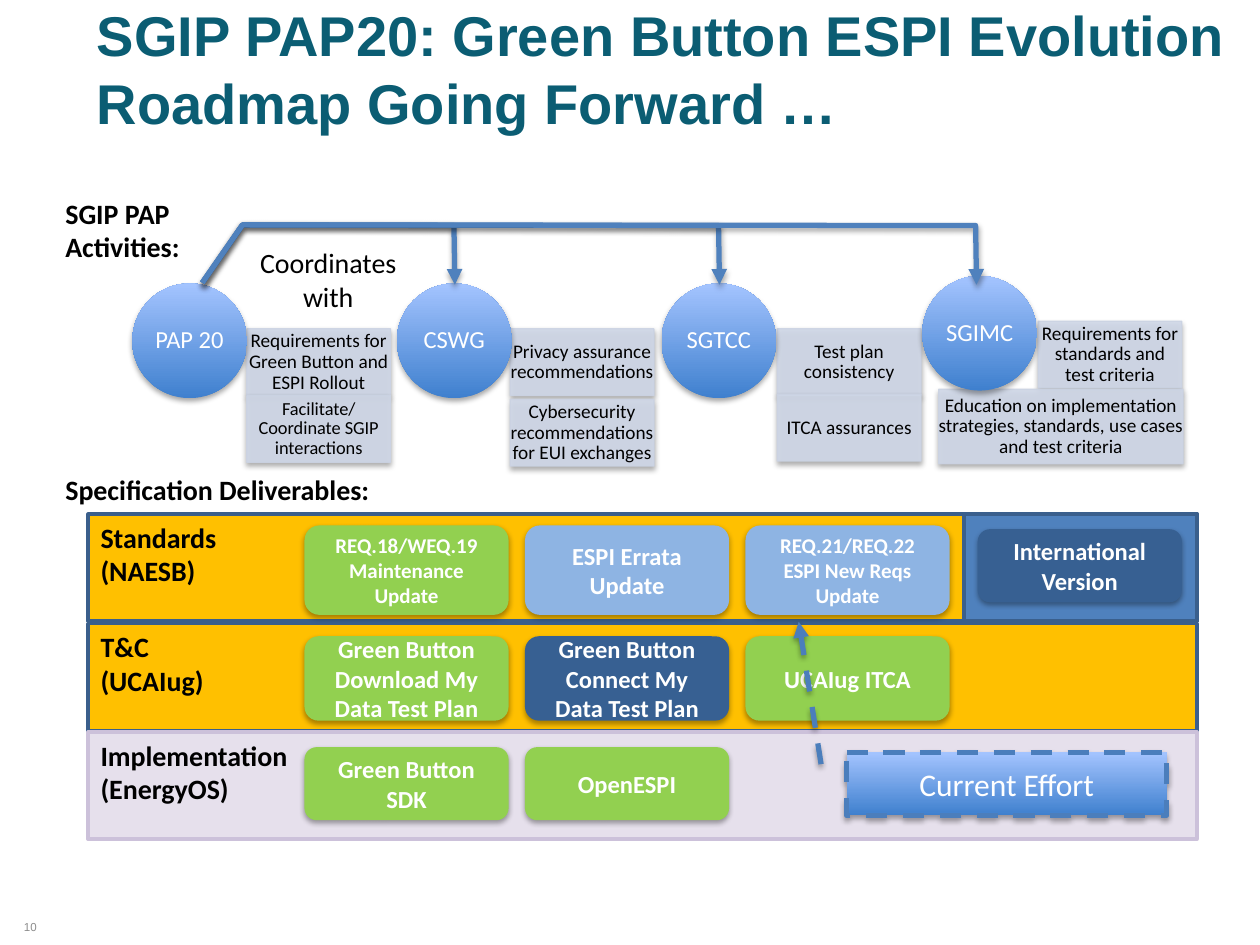
from lxml import etree
from pptx import Presentation
from pptx.dml.color import RGBColor
from pptx.enum.dml import MSO_LINE
from pptx.enum.shapes import MSO_SHAPE
from pptx.enum.text import MSO_ANCHOR, PP_ALIGN
from pptx.oxml.ns import qn
from pptx.util import Pt

RECT, ROUND = MSO_SHAPE.RECTANGLE, MSO_SHAPE.ROUNDED_RECTANGLE
OVAL, CALLOUT = MSO_SHAPE.OVAL, MSO_SHAPE.LINE_CALLOUT_1
LEFT, CENTER, RIGHT = PP_ALIGN.LEFT, PP_ALIGN.CENTER, PP_ALIGN.RIGHT
TOP, MIDDLE = MSO_ANCHOR.TOP, MSO_ANCHOR.MIDDLE
DASH = MSO_LINE.DASH

COLORS = {
    "title": "0B5D73", "number": "8C8C8C", "black": "000000", "white": "FFFFFF",
    "amber": "FFC000", "navy": "376092", "navy_line": "3A5F8C", "blue": "4F81BD",
    "sky": "8EB4E3", "green": "92D050", "lilac": "E6E0EC", "lilac_line": "CCC1DA",
    "task": "D0D8E8", "task_line": "CBD3E3", "callout_line": "4B7EBC",
    "grad_dark": "3F80CE", "grad_light": "A4C4FF",
}
RGB = {name: RGBColor.from_string(value) for name, value in COLORS.items()}

prs = Presentation()
prs.slide_width, prs.slide_height = Pt(720), Pt(540)
s = prs.slides.add_slide(prs.slide_layouts[6])


def add_shadow(sp):
    sp.shadow.inherit = False
    effects = sp._element.spPr.find(qn("a:effectLst"))
    outer = etree.SubElement(effects, qn("a:outerShdw"), blurRad="40000",
                             dist="23000", dir="5400000", rotWithShape="0")
    color = etree.SubElement(outer, qn("a:srgbClr"), val=COLORS["black"])
    etree.SubElement(color, qn("a:alpha"), val="35000")


def add_box(text, x, y, w, h, kind=None, fill=None, line=None, width=2, shadow=False,
            size=16, color="black", bold=False, font="Calibri", align=CENTER,
            anchor=MIDDLE, inset=None, spacing=None, wrap=True):
    place = Pt(x), Pt(y), Pt(w), Pt(h)
    if kind is None:
        sp = s.shapes.add_textbox(*place)
    else:
        sp = s.shapes.add_shape(kind, *place)
        sp.shadow.inherit = False
        if fill == "gradient":
            sp.fill.gradient()
            sp.fill.gradient_angle = 90
            for stop, shade in zip(sp.fill.gradient_stops, ("grad_dark", "grad_light")):
                stop.color.rgb = RGB[shade]
                stop.position = 0 if shade == "grad_dark" else 1
        else:
            sp.fill.solid()
            sp.fill.fore_color.rgb = RGB[fill]
        if line:
            sp.line.color.rgb = RGB[line]
            sp.line.width = Pt(width)
        else:
            sp.line.fill.background()
        if shadow:
            add_shadow(sp)
    tf = sp.text_frame
    tf.word_wrap = wrap
    tf.vertical_anchor = anchor
    if inset is not None:
        tf.margin_left = tf.margin_right = tf.margin_top = tf.margin_bottom = Pt(inset)
    tf.text = text
    for p in tf.paragraphs:
        p.alignment = align
        if spacing:
            p.line_spacing = spacing
        for r in p.runs:
            r.font.name, r.font.size, r.font.bold = font, Pt(size), bold
            r.font.color.rgb = RGB[color]
    return sp


add_box("SGIP PAP20: Green Button ESPI Evolution Roadmap Going Forward …",
        48.24, 5.76, 661.68, 66.24, size=32, font="Arial", color="title", bold=True,
        align=LEFT)
add_box("10", 2.88, 522.72, 25.2, 14.4, size=6.6, font="Arial", color="number",
        align=RIGHT)

lanes = [
    ("Standards\v(NAESB)", 293.76, "amber", "navy_line"),
    ("T&C\v(UCAIug)", 356.4, "amber", "navy_line"),
    ("Implementation\v(EnergyOS)", 418.32, "lilac", "lilac_line"),
]
for text, y, fill, line in lanes:
    add_box(text, 50.4, y, 633.6, 61.2, RECT, fill, line, bold=True, align=LEFT,
            anchor=TOP)
add_box("", 550.8, 293.76, 133.2, 61.2, RECT, "blue", "navy_line")
add_box("International Version", 558.72, 302.4, 116.64, 41.76, ROUND, "navy",
        shadow=True, size=14, color="white", bold=True)

deliverables = [
    (300.24, 51.12, [("REQ.18/WEQ.19 Maintenance Update", "green", 12),
                     ("ESPI Errata Update", "sky", 14),
                     ("REQ.21/REQ.22\nESPI New Reqs Update", "sky", 12)]),
    (363.6, 48.24, [("Green Button Download My Data Test Plan", "green", 14),
                    ("Green Button Connect My Data Test Plan", "navy", 14),
                    ("UCAIug ITCA", "green", 14)]),
    (426.96, 41.76, [("Green Button SDK", "green", 14), ("OpenESPI", "green", 14)]),
]
for y, h, items in deliverables:
    for col, (text, fill, size) in enumerate(items):
        add_box(text, 174 + 126 * col, y, 116.64, h, ROUND, fill, shadow=True,
                size=size, color="white", bold=True)

add_box("Specification Deliverables:", 30.24, 266.4, 195.12, 27.36, bold=True,
        align=LEFT, anchor=TOP, wrap=False)
add_box("SGIP PAP Activities:", 30.24, 108.72, 104.4, 47.52, bold=True, align=LEFT,
        anchor=TOP)
add_box("Coordinates with", 136.8, 136.8, 101.52, 46.08, anchor=TOP)

groups = [
    ("PAP 20", 75.6, 162, [
        ("Requirements for Green Button and ESPI Rollout", 141.12, 187.92, 82.08, 38.16, 11),
        ("Facilitate/Coordinate SGIP interactions", 141.12, 226.08, 82.08, 38.16, 10.5)]),
    ("CSWG", 226.8, 162, [
        ("Privacy assurance recommendations", 291.6, 187.92, 82.08, 38.16, 11),
        ("Cybersecurity recommendations for EUI exchanges", 291.6, 228.24, 82.08, 38.16, 11)]),
    ("SGTCC", 378, 162, [
        ("Test plan consistency", 444.24, 187.92, 82.08, 38.16, 11),
        ("ITCA assurances", 444.24, 225.36, 82.08, 38.16, 11)]),
    ("SGIMC", 527.04, 157.68, [
        ("Requirements for standards and test criteria", 593.28, 183.6, 82.08, 38.16, 11),
        ("Education on implementation strategies, standards, use cases and test criteria",
         536.4, 222.48, 139.68, 42.48, 11)]),
]
for name, x, y, tasks in groups:
    for text, *place, size in tasks:
        sp = add_box(text, *place, RECT, "task", "task_line", 0.75, True, size=size,
                     inset=0, spacing=0.9)
        for color in sp._element.spPr.xpath("./a:solidFill/a:srgbClr | ./a:ln//a:srgbClr"):
            etree.SubElement(color, qn("a:alpha"), val="90000")
    add_box(name, x, y, 65.52, 65.52, OVAL, "gradient", shadow=True, size=14,
            color="white", inset=0, spacing=0.9, wrap=False)

arrows = []
for x in (259.92, 411.12, 558):
    route = [(138.6, 128.5), (x - 0.5, 128.88), (x, 162.72)]
    builder = s.shapes.build_freeform(Pt(115.6), Pt(161.6))
    builder.add_line_segments([(Pt(a), Pt(b)) for a, b in route], close=False)
    sp = builder.convert_to_shape()
    sp.fill.background()
    sp.line.color.rgb = RGB["blue"]
    sp.line.width = Pt(3)
    add_shadow(sp)
    arrows.append(sp)

sp = add_box("Current Effort", 483.84, 429.84, 182.88, 36, CALLOUT, "gradient",
             "callout_line", 3, True, size=18, color="white")
sp.line.dash_style = DASH
for i, value in enumerate((0.19, -0.08, -2.07, -0.15)):
    sp.adjustments[i] = value
arrows.append(sp)

for sp in arrows:
    etree.SubElement(sp._element.spPr.find(qn("a:ln")), qn("a:tailEnd"), type="triangle")

prs.save("out.pptx")
